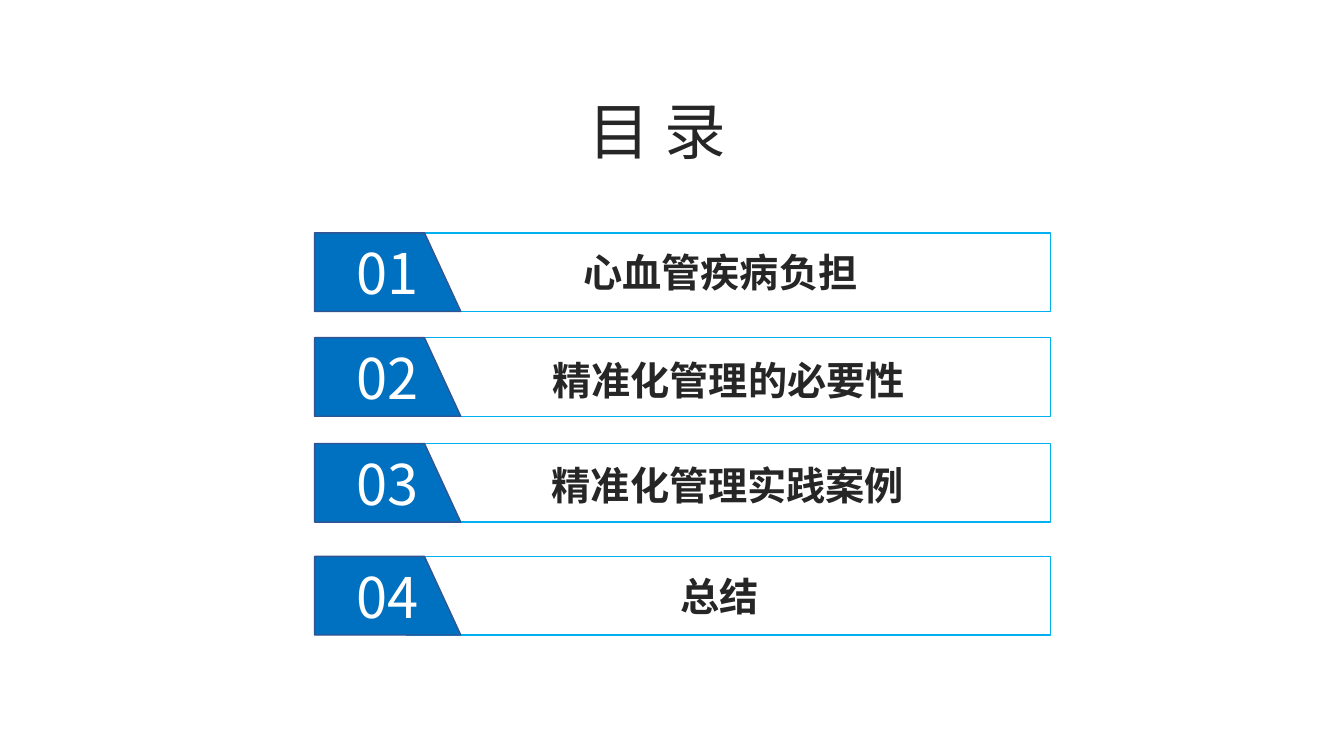
import pptx
import pptx.dml.color
import pptx.enum.text
import pptx.enum.shapes
import pptx.oxml
import pptx.oxml.ns
import pptx.util

Inches = pptx.util.Inches
Pt = pptx.util.Pt
ALIGN = pptx.enum.text.PP_ALIGN
ANCHOR = pptx.enum.text.MSO_ANCHOR


def colour(value):
    return pptx.dml.color.RGBColor.from_string(value)


class AgendaPage:
    """Holds the style and the current slide, and draws its elements."""

    typeface = "Noto Sans CJK SC"
    ink, white = "262626", "FFFFFF"
    tab_fill, tab_line, frame_line = "0070C0", "325491", "00B0F0"
    row_height = 0.78

    def __init__(self, deck):
        self.page = deck.slides.add_slide(deck.slide_layouts[5])

    def set_text(self, box, text, size, ink, bold=False, align=ALIGN.CENTER, anchor=ANCHOR.TOP):
        frame = box.text_frame
        frame.text = text
        frame.word_wrap = True
        frame.auto_size = pptx.enum.text.MSO_AUTO_SIZE.NONE
        frame.vertical_anchor = anchor
        para = frame.paragraphs[0]
        para.alignment = align
        font = para.font
        font.size, font.bold, font.name = Pt(size), bold, self.typeface
        font.color.rgb = colour(ink)
        properties = para._p.pPr.find(pptx.oxml.ns.qn("a:defRPr"))
        east_asian = pptx.oxml.parse_xml(
            f'<a:ea {pptx.oxml.ns.nsdecls("a")} typeface="{self.typeface}"/>')
        properties.find(pptx.oxml.ns.qn("a:latin")).addnext(east_asian)

    def outline(self, shape, line):
        shape.shadow.inherit = False
        shape.line.color.rgb = colour(line)
        shape.line.width = Pt(1)

    def title(self, text, left, top, width, height):
        box = self.page.shapes.title
        box.left, box.top = Inches(left), Inches(top)
        box.width, box.height = Inches(width), Inches(height)
        self.set_text(box, text, 44, self.ink, align=ALIGN.LEFT)

    def frame(self, top):
        shape = self.page.shapes.add_shape(
            pptx.enum.shapes.MSO_SHAPE.RECTANGLE,
            Inches(4.03), Inches(top), Inches(6.39), Inches(self.row_height))
        shape.fill.background()
        self.outline(shape, self.frame_line)

    def number_tab(self, number, top):
        left, bottom = 3.12, top + self.row_height
        corners = [(4.21, top), (4.57, bottom), (left, bottom)]
        builder = self.page.shapes.build_freeform(Inches(left), Inches(top))
        builder.add_line_segments([(Inches(x), Inches(y)) for x, y in corners])
        shape = builder.convert_to_shape()
        shape.fill.solid()
        shape.fill.fore_color.rgb = colour(self.tab_fill)
        self.outline(shape, self.tab_line)
        self.set_text(shape, f"{number:02d}", 40, self.white, anchor=ANCHOR.MIDDLE)

    def caption(self, text, left, top, width):
        box = self.page.shapes.add_textbox(
            Inches(left), Inches(top), Inches(width), Inches(0.57))
        self.set_text(box, text, 28, self.ink, bold=True)


def main():
    deck = pptx.Presentation()
    deck.slide_width, deck.slide_height = Inches(13.33), Inches(7.5)
    agenda = AgendaPage(deck)
    agenda.title("目 录", 5.74, 0.87, 1.62, 0.84)
    chapters = [
        ("心血管疾病负担", 2.31, 4.28, 2.41, 5.73),
        ("精准化管理的必要性", 3.35, 4.42, 3.49, 5.61),
        ("精准化管理实践案例", 4.4, 4.4, 4.53, 5.64),
        ("总结", 5.52, 4.27, 5.63, 5.73),
    ]
    for number, (text, row_top, left, top, width) in enumerate(chapters, 1):
        agenda.frame(row_top)
        agenda.number_tab(number, row_top)
        agenda.caption(text, left, top, width)
    deck.save("out.pptx")


if __name__ == "__main__":
    main()
